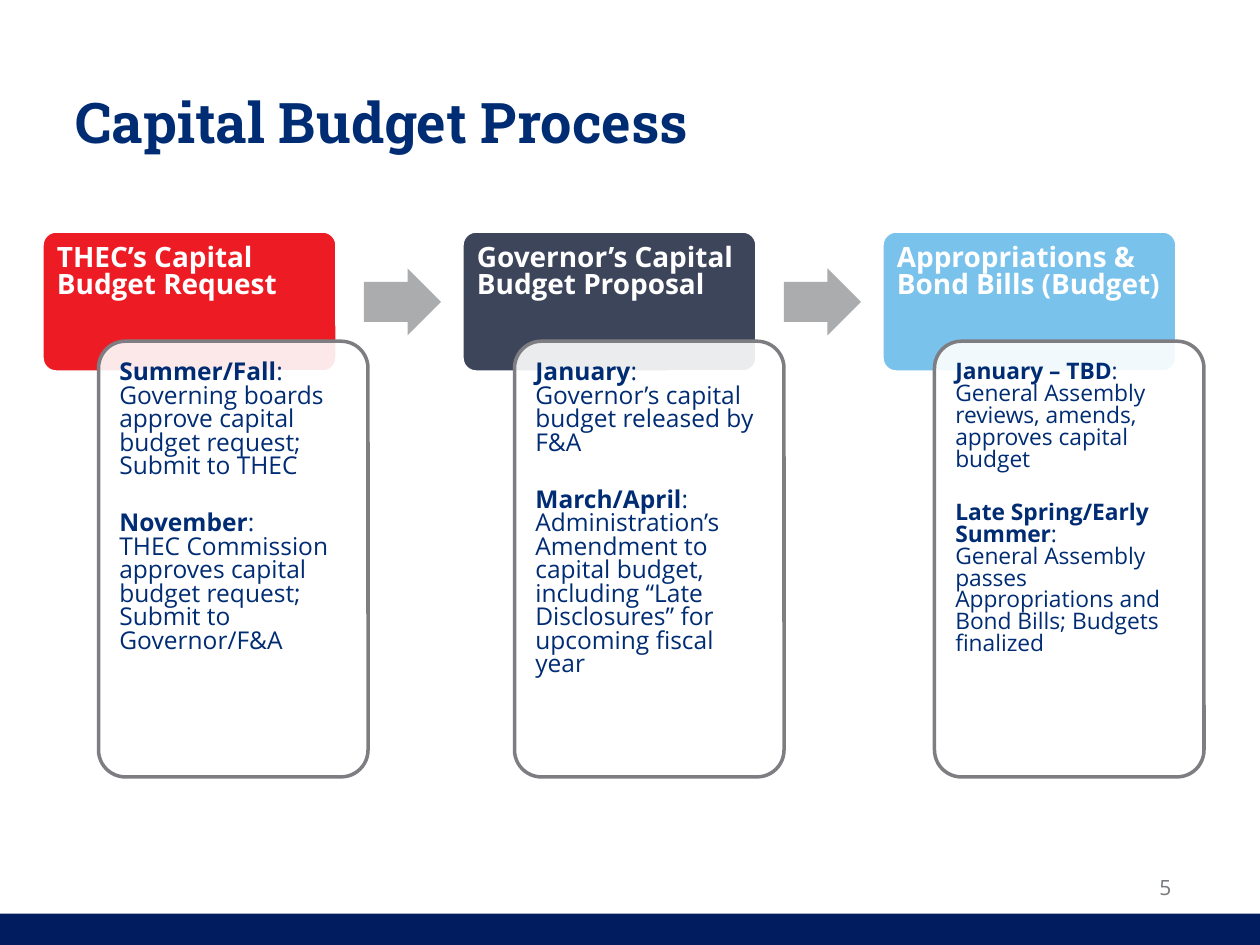
from lxml import etree
from pptx import Presentation
from pptx.dml.color import RGBColor
from pptx.enum import shapes, text
from pptx.oxml.ns import qn
from pptx.util import Pt

COLORS = {"navy": "002C73", "bar": "011D5F", "red": "ED1C24", "slate": "3D455B",
          "sky": "79C2EC", "arrow": "ABACAD", "border": "7E7E82",
          "number": "75787B", "white": "FFFFFF"}
BODY_FONT, TITLE_FONT = "Open Sans", "Roboto Slab"

TITLE = "Capital Budget Process"
PAGE_NUMBER = "5"
STAGES = [
    {"name": "THEC’s Capital Budget Request", "color": "red", "size": 14,
     "card_offset": 32.3, "gap": 19,
     "steps": [
         ("Summer/Fall", ": Governing boards approve capital budget request; Submit to THEC"),
         ("November", ": \nTHEC Commission approves capital budget request; Submit to Governor/F&A")]},
    {"name": "Governor’s Capital Budget Proposal", "color": "slate", "size": 14,
     "card_offset": 30, "gap": 19,
     "steps": [
         ("January", ": Governor’s capital budget released by F&A"),
         ("March/April", ": Administration’s Amendment to capital budget, including “Late "
                         "Disclosures” for upcoming fiscal year")]},
    {"name": "Appropriations & Bond Bills (Budget)", "color": "sky", "size": 13,
     "card_offset": 30, "gap": 18,
     "steps": [
         ("January – TBD", ": General Assembly reviews, amends, approves capital budget"),
         ("Late Spring/Early Summer", ": \nGeneral Assembly passes Appropriations and "
                                      "Bond Bills; Budgets finalized")]},
]

LEFT, STEP = 24, 240
HEADER_TOP, HEADER_W, HEADER_H = 132, 168.6, 80.6
CARD_TOP, CARD_W, CARD_H = 195, 154, 249
ARROW_OFFSET, ARROW_TOP, ARROW_W, ARROW_H = 184, 153.4, 44, 38.2


def rgb(name):
    return RGBColor.from_string(COLORS[name])


def add_shape(slide, kind, box, fill, line=None, adjustments=()):
    s = slide.shapes.add_shape(kind, *map(Pt, box))
    s.shadow.inherit = False
    s.fill.solid()
    s.fill.fore_color.rgb = rgb(fill)
    if line:
        s.line.color.rgb = rgb(line)
        s.line.width = Pt(2)
    else:
        s.line.fill.background()
    for i, value in enumerate(adjustments):
        s.adjustments[i] = value
    return s


def set_frame(s, insets, anchor):
    """Wrap the text; insets are left, top, right, bottom."""
    tf = s.text_frame
    tf.word_wrap = True
    tf.vertical_anchor = anchor
    tf.margin_left, tf.margin_top, tf.margin_right, tf.margin_bottom = map(Pt, insets)
    return tf


def add_run(p, content, size, color, bold=False, font=BODY_FONT):
    """Add text to a paragraph, turning each newline into a line break."""
    for i, part in enumerate(content.split("\n")):
        if i:
            p.add_line_break()
        r = p.add_run()
        r.text = part
        r.font.name, r.font.size, r.font.bold = font, Pt(size), bold
        r.font.color.rgb = rgb(color)


def add_label(slide, box, content, size, color, align, **style):
    s = slide.shapes.add_textbox(*map(Pt, box))
    p = set_frame(s, (7.2, 3.6, 7.2, 3.6), text.MSO_ANCHOR.MIDDLE).paragraphs[0]
    p.alignment = align
    add_run(p, content, size, color, **style)


def add_header(slide, x, stage):
    s = add_shape(slide, shapes.MSO_SHAPE.ROUNDED_RECTANGLE,
                  (x, HEADER_TOP, HEADER_W, HEADER_H), stage["color"], "white", [0.1])
    p = set_frame(s, (6.2, 6.2, 5, 5), text.MSO_ANCHOR.TOP).paragraphs[0]
    p.alignment = text.PP_ALIGN.LEFT
    p.line_spacing = 0.81
    add_run(p, stage["name"], 16, "white", bold=True)


def add_card(slide, x, stage):
    s = add_shape(slide, shapes.MSO_SHAPE.ROUNDED_RECTANGLE,
                  (x + stage["card_offset"], CARD_TOP, CARD_W, CARD_H),
                  "white", "border", [0.1])
    fill_color = s.fill._xPr.find(qn("a:solidFill"))[0]
    etree.SubElement(fill_color, qn("a:alpha")).set("val", "90000")
    tf = set_frame(s, (7.4, 7.4, 7.8, 7.4), text.MSO_ANCHOR.TOP)
    for i, (when, what) in enumerate(stage["steps"]):
        p = tf.add_paragraph() if i else tf.paragraphs[0]
        p.alignment = text.PP_ALIGN.LEFT
        p.line_spacing = 0.8
        if i:
            p.space_before = Pt(stage["gap"])
        add_run(p, when, stage["size"], "navy", bold=True)
        add_run(p, what, stage["size"], "navy")


def main():
    prs = Presentation()
    prs.slide_width, prs.slide_height = Pt(720), Pt(540)
    slide = prs.slides.add_slide(prs.slide_layouts[6])

    add_shape(slide, shapes.MSO_SHAPE.RECTANGLE, (0, 522, 720, 18), "bar")
    add_label(slide, (648, 492, 36, 30), PAGE_NUMBER, 12, "number", text.PP_ALIGN.CENTER)
    add_label(slide, (36, 24, 648, 90), TITLE, 32, "navy", text.PP_ALIGN.LEFT,
              bold=True, font=TITLE_FONT)

    columns = [(LEFT + i * STEP, stage) for i, stage in enumerate(STAGES)]
    for x, stage in columns:
        add_header(slide, x, stage)
    for x, _ in columns[:-1]:
        add_shape(slide, shapes.MSO_SHAPE.RIGHT_ARROW,
                  (x + ARROW_OFFSET, ARROW_TOP, ARROW_W, ARROW_H), "arrow",
                  adjustments=[0.6, 0.5])
    for x, stage in columns:
        add_card(slide, x, stage)

    prs.save("out.pptx")


if __name__ == "__main__":
    main()
